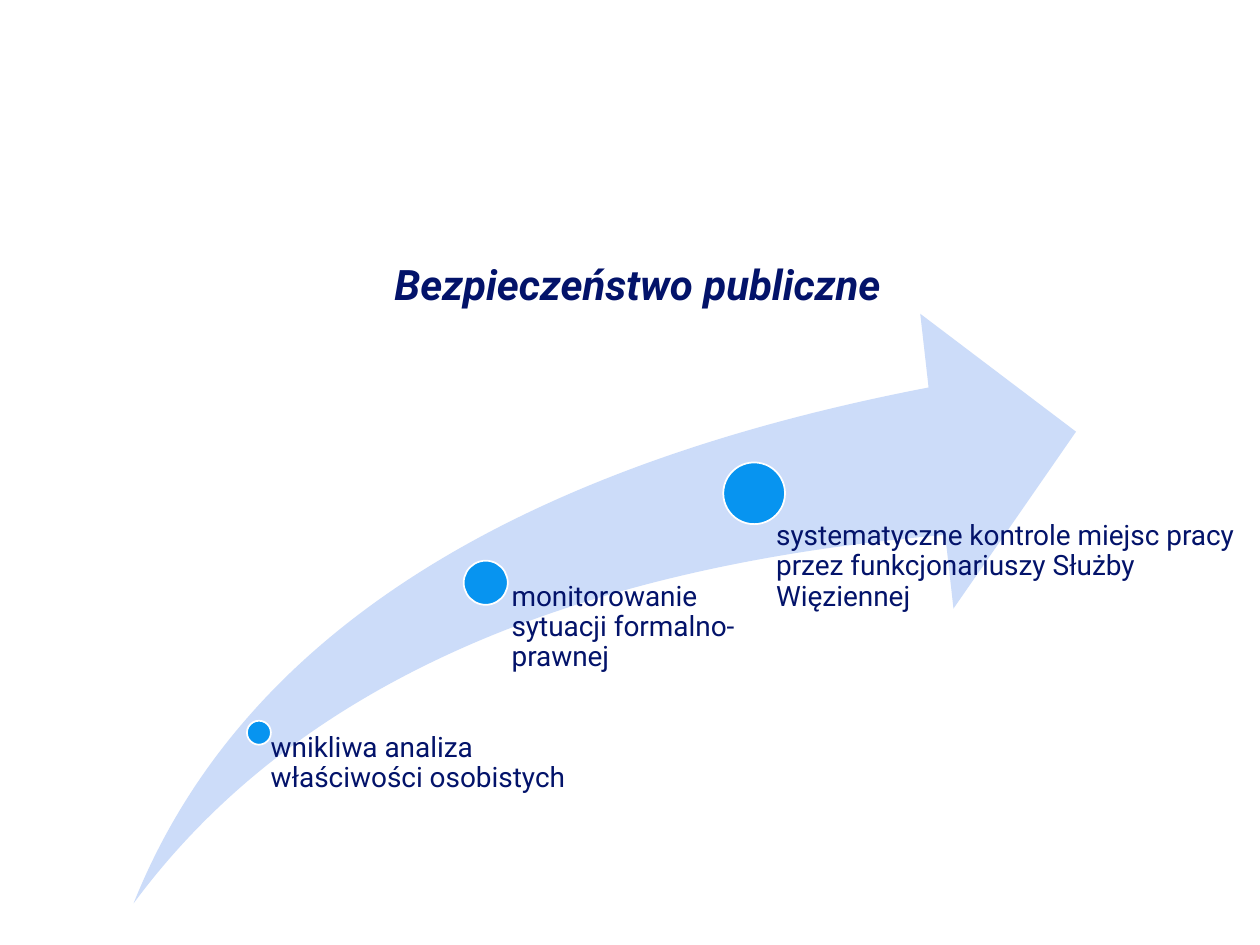
from pptx import Presentation
from pptx.dml.color import RGBColor
from pptx.enum.shapes import MSO_SHAPE
from pptx.enum.text import MSO_ANCHOR, PP_ALIGN
from pptx.util import Inches, Pt

NAVY = RGBColor(0x03, 0x13, 0x6A)
PALE_BLUE = RGBColor(0xCC, 0xDC, 0xF9)
BLUE = RGBColor(0x07, 0x94, 0xF0)
WHITE = RGBColor(0xFF, 0xFF, 0xFF)

# dot (left, top, diameter), label (left, top, width, height), left inset, text
STEPS = [
    ((1.96, 5.72, 0.19), (2.05, 5.82, 2.5, 1.35), 0.1,
     "wnikliwa analiza właściwości osobistych"),
    ((3.68, 4.45, 0.35), (3.87, 4.62, 2.32, 2.54), 0.19,
     "monitorowanie sytuacji formalno- prawnej"),
    ((5.74, 3.67, 0.49), (5.9, 4.14, 3.98, 2.8), 0.26,
     "systematyczne kontrole miejsc pracy przez funkcjonariuszy Służby Więziennej"),
]

prs = Presentation()
prs.slide_width, prs.slide_height = Inches(10), Inches(7.5)
s = prs.slides.add_slide(prs.slide_layouts[6])


def add_text(box, text, size):
    tf = s.shapes.add_textbox(*map(Inches, box)).text_frame
    tf.word_wrap = True
    p = tf.paragraphs[0]
    p.text = text
    p.font.name = "Roboto"
    p.font.size = Pt(size)
    p.font.color.rgb = NAVY
    return tf, p


def add_shape(kind, box, fill):
    sp = s.shapes.add_shape(kind, *map(Inches, box))
    sp.shadow.inherit = False
    sp.fill.solid()
    sp.fill.fore_color.rgb = fill
    return sp


tf, p = add_text((1.06, 1.86, 8, 0.78), "Bezpieczeństwo publiczne", 24)
tf.vertical_anchor = MSO_ANCHOR.MIDDLE
p.alignment = PP_ALIGN.CENTER
p.font.bold = p.font.italic = True

arrow = add_shape(MSO_SHAPE.SWOOSH_ARROW, (1.06, 2.49, 7.48, 4.68), PALE_BLUE)
arrow.adjustments[0] = arrow.adjustments[1] = 0.25
arrow.line.fill.background()

for (left, top, diameter), label_box, inset, text in STEPS:
    dot = add_shape(MSO_SHAPE.OVAL, (left, top, diameter, diameter), BLUE)
    dot.line.color.rgb = WHITE
    dot.line.width = Pt(1)

    tf, p = add_text(label_box, text, 16)
    tf.margin_left = Inches(inset)
    tf.margin_top = tf.margin_right = tf.margin_bottom = 0
    p.line_spacing = 0.9

prs.save("out.pptx")
